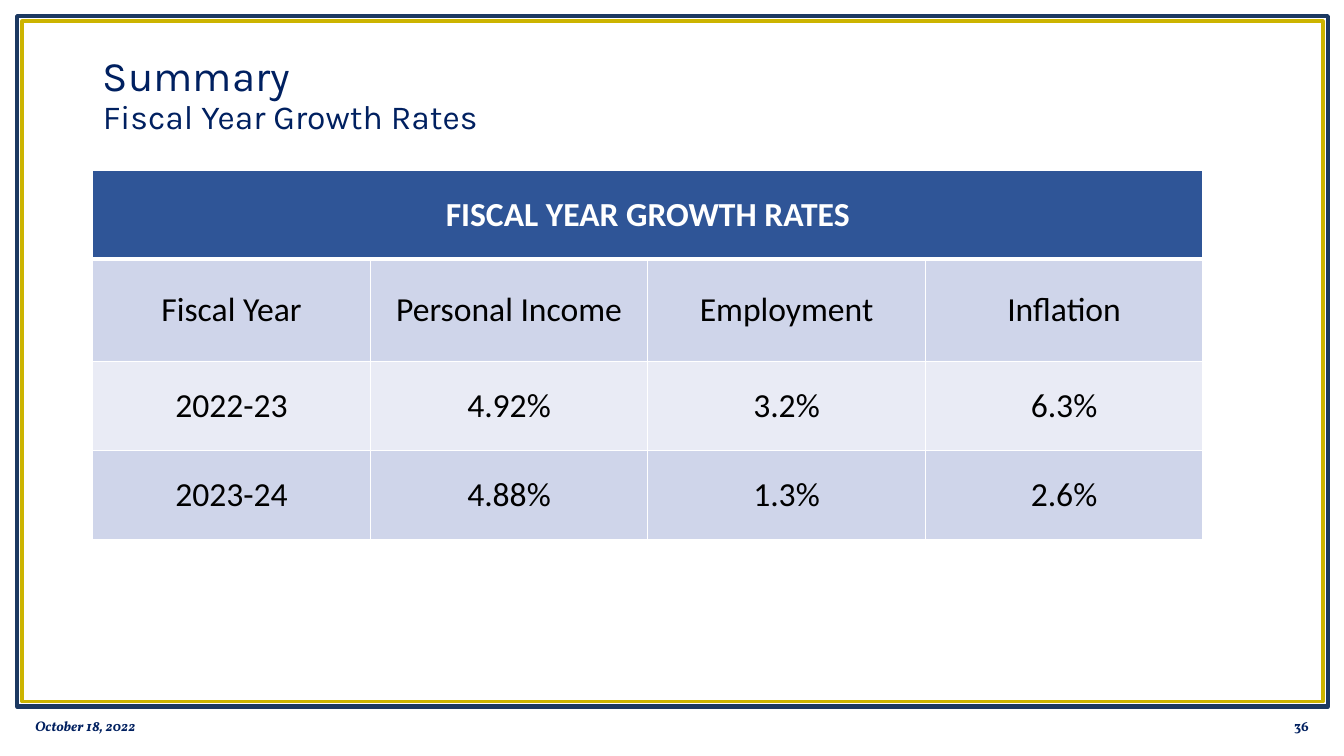
import copy
from dataclasses import dataclass

import lxml.etree
import pptx
import pptx.dml.color
import pptx.enum.shapes
import pptx.enum.text
import pptx.oxml.ns
import pptx.util

TITLE = ("Summary", "Fiscal Year Growth Rates")
TABLE_HEADING = "FISCAL YEAR GROWTH RATES"
ROWS = [
    ("Fiscal Year", "Personal Income", "Employment", "Inflation"),
    ("2022-23", "4.92%", "3.2%", "6.3%"),
    ("2023-24", "4.88%", "1.3%", "2.6%"),
]
DATE = "October 18, 2022"
SLIDE_NUMBER = "36"

PX = 9144  # 100 px to the inch
SLIDE = (1333, 750)
TITLE_BOX = (92, 40, 1150, 110)
TABLE_BOX = (92, 169, 1101, 367)
ROW_HEIGHTS = (88, 102, 88, 88)
FOOTER_TOP, FOOTER_WIDTH, FOOTER_HEIGHT = 700, 300, 40
DATE_LEFT, NUMBER_LEFT = 25, 1008


@dataclass(frozen=True)
class Theme:
    navy: str = "002060"
    frame_blue: str = "1C3961"
    gold: str = "CCB400"
    heading_fill: str = "2F5597"
    bands: tuple = ("CFD5EA", "E9EBF5")
    white: str = "FFFFFF"
    black: str = "000000"
    title_font: str = "Karla"
    table_font: str = "Calibri"
    footer_font: str = "Vollkorn"
    title_sizes: tuple = (30, 24)
    table_size: int = 24
    footer_size: int = 10


THEME = Theme()
FRAMES = [
    ((17, 16, 1300, 685), THEME.frame_blue, 3),
    ((22, 21, 1290, 675), THEME.gold, 2.5),
]
Align = pptx.enum.text.PP_ALIGN
Anchor = pptx.enum.text.MSO_ANCHOR


def rgb(value):
    return pptx.dml.color.RGBColor.from_string(value)


def emu(lengths):
    return [length * PX for length in lengths]


def add_span(para, text, color, **format_values):
    span = para.add_run()
    span.text = text
    span.font.color.rgb = rgb(color)
    for name, value in format_values.items():
        setattr(span.font, name, value)
    return span


def add_frame(page, box, color, width):
    frame = page.shapes.add_shape(pptx.enum.shapes.MSO_SHAPE.RECTANGLE, *emu(box))
    frame.shadow.inherit = False
    frame.fill.background()
    frame.line.color.rgb = rgb(color)
    frame.line.width = pptx.util.Pt(width)


def fill_title(page):
    title = page.shapes.title
    title.left, title.top, title.width, title.height = emu(TITLE_BOX)
    box = title.text_frame
    box.word_wrap = True
    box.auto_size = pptx.enum.text.MSO_AUTO_SIZE.NONE
    box.vertical_anchor = Anchor.MIDDLE
    para = box.paragraphs[0]
    para.alignment = Align.LEFT
    para.line_spacing = 0.9
    for index, (text, size) in enumerate(zip(TITLE, THEME.title_sizes)):
        if index:
            # The break takes the size of the line it ends.
            para.add_line_break()
            para._p[-1].append(copy.deepcopy(span._r.rPr))
        span = add_span(para, text, THEME.navy, name=THEME.title_font,
                        size=pptx.util.Pt(size))


def set_borders(cell, widths):
    properties = cell._tc.get_or_add_tcPr()
    for index, (side, width) in enumerate(widths.items()):
        line = lxml.etree.Element(pptx.oxml.ns.qn(f"a:ln{side}"),
                                  w=str(pptx.util.Pt(width)))
        fill = lxml.etree.SubElement(line, pptx.oxml.ns.qn("a:solidFill"))
        lxml.etree.SubElement(fill, pptx.oxml.ns.qn("a:srgbClr"), val=THEME.white)
        properties.insert(index, line)


def fill_cell(cell, text, fill, color, bold, top=1, bottom=1):
    cell.fill.solid()
    cell.fill.fore_color.rgb = rgb(fill)
    cell.vertical_anchor = Anchor.MIDDLE
    set_borders(cell, {"L": 1, "R": 1, "T": top, "B": bottom})
    if text:
        para = cell.text_frame.paragraphs[0]
        para.alignment = Align.CENTER
        add_span(para, text, color, name=THEME.table_font,
                 size=pptx.util.Pt(THEME.table_size), bold=bold)


def add_growth_table(page):
    columns = len(ROWS[0])
    table = page.shapes.add_table(len(ROWS) + 1, columns, *emu(TABLE_BOX)).table
    for column in table.columns:
        column.width = TABLE_BOX[2] * PX // columns
    for row, height in zip(table.rows, ROW_HEIGHTS):
        row.height = height * PX

    table.cell(0, 0).merge(table.cell(0, columns - 1))
    for column in range(columns):
        fill_cell(table.cell(0, column), "" if column else TABLE_HEADING,
                  THEME.heading_fill, THEME.white, True, bottom=3)
    for row, values in enumerate(ROWS, start=1):
        for column, text in enumerate(values):
            cell = table.cell(row, column)
            fill_cell(cell, text, THEME.bands[(row - 1) % 2], THEME.black, False,
                      top=3 if row == 1 else 1)
            if column:
                cell.margin_left = cell.margin_right = 0
                cell.margin_top = cell.margin_bottom = 0


def add_footer(page, left, text, alignment, italic):
    box = page.shapes.add_textbox(
        *emu((left, FOOTER_TOP, FOOTER_WIDTH, FOOTER_HEIGHT))).text_frame
    box.word_wrap = True
    box.vertical_anchor = Anchor.MIDDLE
    para = box.paragraphs[0]
    para.alignment = alignment
    add_span(para, text, THEME.navy, name=THEME.footer_font,
             size=pptx.util.Pt(THEME.footer_size), bold=True, italic=italic)


def main():
    deck = pptx.Presentation()
    deck.slide_width, deck.slide_height = emu(SLIDE)
    page = deck.slides.add_slide(deck.slide_layouts.get_by_name("Title Only"))
    for frame in FRAMES:
        add_frame(page, *frame)
    fill_title(page)
    add_growth_table(page)
    add_footer(page, NUMBER_LEFT, SLIDE_NUMBER, Align.RIGHT, False)
    add_footer(page, DATE_LEFT, DATE, Align.LEFT, True)
    deck.save("out.pptx")


if __name__ == "__main__":
    main()
